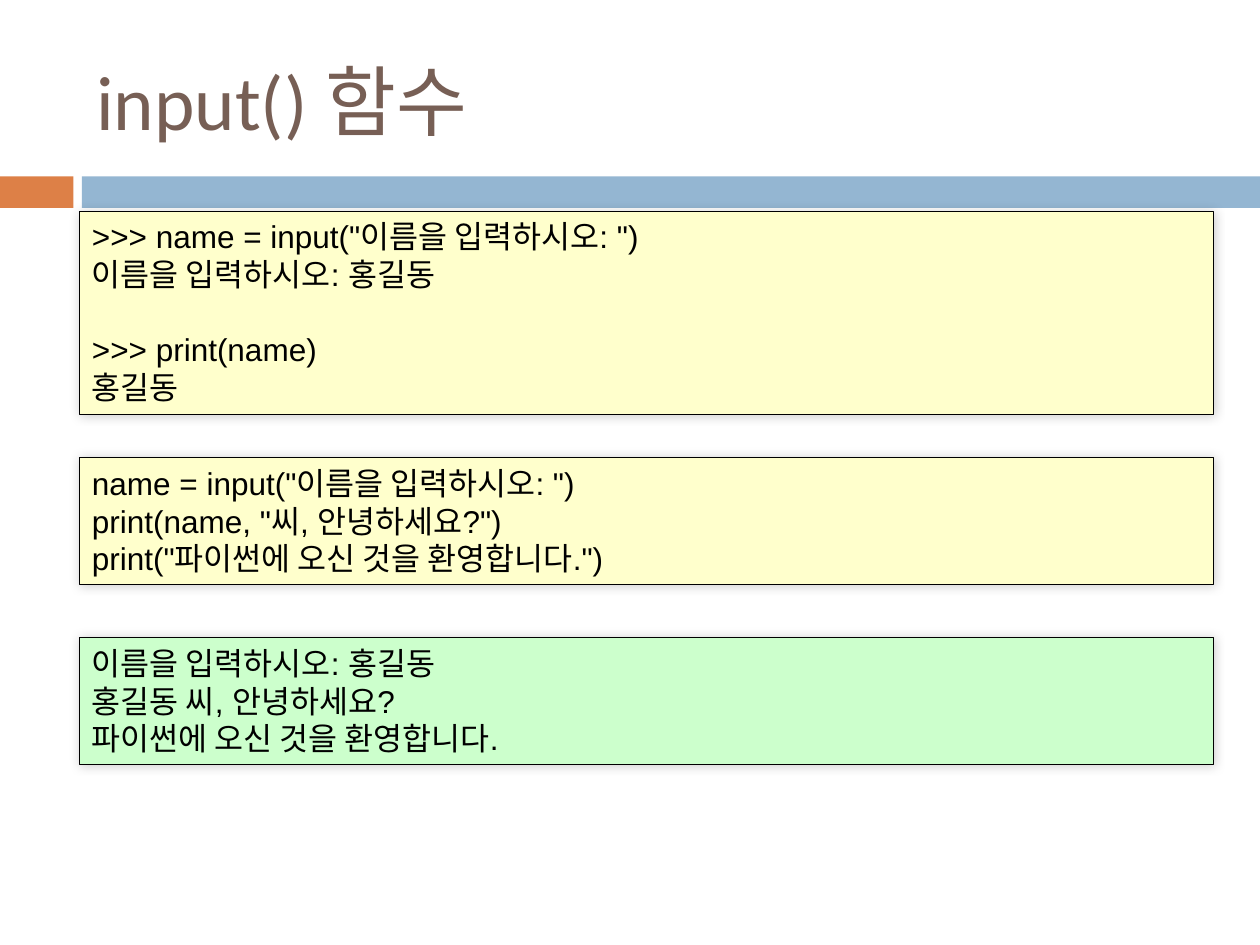
from dataclasses import dataclass

from lxml import etree
from pptx import Presentation
from pptx.dml.color import RGBColor
from pptx.enum.shapes import MSO_SHAPE
from pptx.enum.text import MSO_ANCHOR, MSO_AUTO_SIZE, PP_ALIGN
from pptx.oxml.ns import qn
from pptx.util import Pt

RECTANGLE = MSO_SHAPE.RECTANGLE
MIDDLE, TOP = MSO_ANCHOR.MIDDLE, MSO_ANCHOR.TOP
LEFT = PP_ALIGN.LEFT
GROW = MSO_AUTO_SIZE.SHAPE_TO_FIT_TEXT
BLANK_LAYOUT = 6


@dataclass(frozen=True)
class Theme:
    accent: str = "DD8047"
    band: str = "94B6D2"
    title: str = "775F55"
    code: str = "FFFFCC"
    output: str = "CCFFCC"
    ink: str = "000000"
    title_font: str = "Calibri"
    body_font: str = "Arial"
    title_size: int = 44
    body_size: int = 18
    paragraph_gap: int = 21


THEME = Theme()


def add_rectangle(slide, box, color):
    shape = slide.shapes.add_shape(RECTANGLE, *map(Pt, box))
    shape.shadow.inherit = False
    shape.fill.solid()
    shape.fill.fore_color.rgb = RGBColor.from_string(color)
    shape.line.fill.background()
    return shape


def format_run(run, name, size, color):
    for attribute, value in {"name": name, "size": Pt(size)}.items():
        setattr(run.font, attribute, value)
    run.font.color.rgb = RGBColor.from_string(color)


def add_soft_shadow(shape):
    effects = shape._element.spPr.find(qn("a:effectLst"))
    shadow = etree.SubElement(effects, qn("a:outerShdw"), blurRad=str(Pt(6)),
                              dist="0", dir=str(315 * 60000))
    color = etree.SubElement(shadow, qn("a:srgbClr"), val=THEME.ink)
    etree.SubElement(color, qn("a:alpha"), val="20000")


def add_title(slide, box, text):
    frame = slide.shapes.add_textbox(*map(Pt, box)).text_frame
    for attribute, value in {"word_wrap": True, "vertical_anchor": MIDDLE}.items():
        setattr(frame, attribute, value)
    run = frame.paragraphs[0].add_run()
    run.text = text
    format_run(run, THEME.title_font, THEME.title_size, THEME.title)


def add_band(slide, box):
    """Short accent block, a gap, then a bar to the right edge."""
    left, top, width, height = box
    accent_width, gap = 42, 4.8
    bar_offset = accent_width + gap
    add_rectangle(slide, (left, top, accent_width, height), THEME.accent)
    add_rectangle(slide, (left + bar_offset, top, width - bar_offset, height), THEME.band)


def add_code_box(slide, box, color, groups):
    """Groups of lines, set apart by paragraph spacing."""
    shape = add_rectangle(slide, box, color)
    shape.line.color.rgb = RGBColor.from_string(THEME.ink)
    shape.line.width = Pt(0.75)
    add_soft_shadow(shape)
    frame = shape.text_frame
    settings = {"word_wrap": True, "vertical_anchor": TOP, "auto_size": GROW}
    for attribute, value in settings.items():
        setattr(frame, attribute, value)
    paragraph = None
    for group in groups:
        for index, line in enumerate(group):
            starts_new_group = paragraph is not None and index == 0
            paragraph = frame.paragraphs[0] if paragraph is None else frame.add_paragraph()
            paragraph.alignment = LEFT
            if starts_new_group:
                paragraph.space_before = Pt(THEME.paragraph_gap)
            run = paragraph.add_run()
            run.text = line
            format_run(run, THEME.body_font, THEME.body_size, THEME.ink)


def main():
    presentation = Presentation()
    presentation.slide_width, presentation.slide_height = Pt(720), Pt(540)
    slide = presentation.slides.add_slide(presentation.slide_layouts[BLANK_LAYOUT])

    # Heading
    add_band(slide, (0, 100.8, 720, 18))
    add_title(slide, (48, 18, 642, 78), "input() 함수")

    # Code and its output: top, height, fill, groups of lines
    code_boxes = [
        (120.7, 116.3, THEME.code, [
            ['>>> name = input("이름을 입력하시오: ")', "이름을 입력하시오: 홍길동"],
            [">>> print(name)", "홍길동"],
        ]),
        (261.5, 72.7, THEME.code, [[
            'name = input("이름을 입력하시오: ")',
            'print(name, "씨, 안녕하세요?")',
            'print("파이썬에 오신 것을 환영합니다.")',
        ]]),
        (364.3, 72.7, THEME.output, [[
            "이름을 입력하시오: 홍길동",
            "홍길동 씨, 안녕하세요?",
            "파이썬에 오신 것을 환영합니다.",
        ]]),
    ]
    for top, height, color, groups in code_boxes:
        add_code_box(slide, (45.5, top, 648, height), color, groups)

    presentation.save("out.pptx")


if __name__ == "__main__":
    main()
